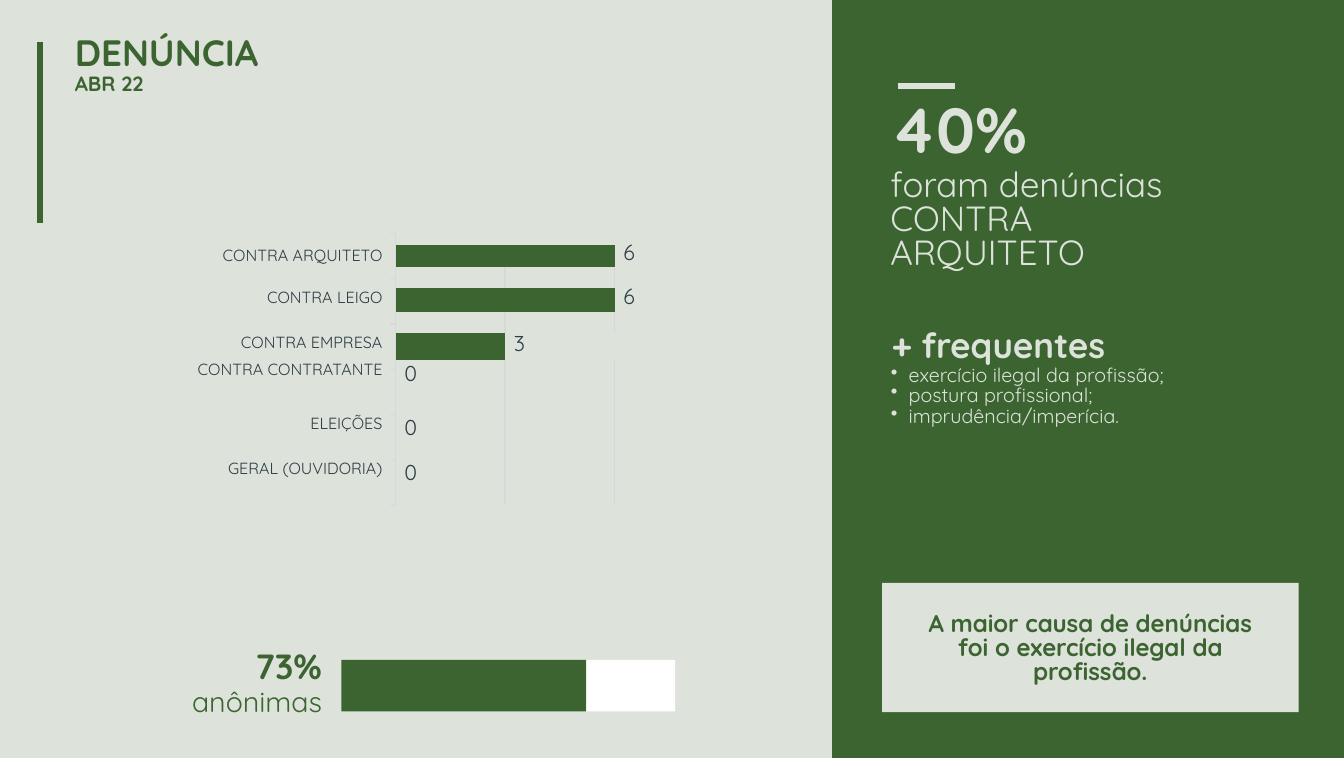
from lxml import etree
from pptx import Presentation
from pptx.dml.color import RGBColor
from pptx.enum.shapes import MSO_CONNECTOR, MSO_SHAPE
from pptx.enum.text import MSO_ANCHOR, MSO_AUTO_SIZE, PP_ALIGN
from pptx.oxml.ns import qn
from pptx.util import Pt

STRAIGHT = MSO_CONNECTOR.STRAIGHT
RECTANGLE = MSO_SHAPE.RECTANGLE
LEFT, CENTER, RIGHT = PP_ALIGN.LEFT, PP_ALIGN.CENTER, PP_ALIGN.RIGHT
TOP = MSO_ANCHOR.TOP
NO_AUTOFIT = MSO_AUTO_SIZE.NONE

FONT = "Quicksand"
COLORS = {
    "green": "3B6431",
    "mist": "DDE2DA",
    "white": "FFFFFF",
    "slate": "2F3D46",
    "grid": "D8D8D8",
}
PLAIN_TABLE_STYLE = "{2D5ABB26-0587-4C30-8999-92F81FD0307C}"

COLUMN_WIDTHS = [113, 61.2, 61.2, 14.4]
ROW_HEIGHTS = [12.2, 11.7, 13.5, 11.6, 15.1, 30.2, 25.2, 25.2]
# row, label, space above label, value, space above value, line height
COMPLAINTS = [
    (0, "CONTRA ARQUITETO", 0.3, 6, 0, 11.6),
    (2, "CONTRA LEIGO", 1.4, 6, 0.2, 12.4),
    (4, "CONTRA EMPRESA", 1.6, 3, 0.2, 13.7),
    (5, "CONTRA CONTRATANTE", 13, 0, 11.8, None),
    (6, "ELEIÇÕES", 6.8, 0, 5.4, None),
    (7, "GERAL (OUVIDORIA)", 6.8, 0, 5.4, None),
]
UNITS_PER_COLUMN = 3
GRID_ROWS = [1, 3, 5, 6, 7]
FREQUENT_CAUSES = [
    ("exercício ilegal da profissão;", 11.5),
    ("postura profissional;", 11.1),
    ("imprudência/imperícia.", 12.2),
]


def rgb(color):
    return RGBColor.from_string(COLORS[color])


def write_para(para, text, size, color, bold=False, align=LEFT,
               line=None, before=0, indent=0):
    para.alignment = align
    para.space_before = Pt(before)
    if line:
        para.line_spacing = line
    if indent:
        para._p.get_or_add_pPr().set("marL", str(Pt(indent)))
    span = para.add_run()
    span.text = text
    span.font.name = FONT
    span.font.size = Pt(size)
    span.font.bold = bold
    span.font.color.rgb = rgb(color)


def add_bullet(para):
    properties = para._p.get_or_add_pPr()
    properties.set("marL", str(Pt(11)))
    properties.set("indent", str(Pt(-10)))
    etree.SubElement(properties, qn("a:buChar")).set("char", "•")


def prepare_frame(frame, left=0, top=0, right=0):
    frame.margin_left, frame.margin_top = Pt(left), Pt(top)
    frame.margin_right, frame.margin_bottom = Pt(right), Pt(0)
    frame.vertical_anchor = TOP
    frame.word_wrap = True
    frame.auto_size = NO_AUTOFIT
    return frame


def add_text(page, left, top, width, height, inset):
    box = page.shapes.add_textbox(Pt(left), Pt(top), Pt(width), Pt(height))
    return prepare_frame(box.text_frame, top=inset)


def add_block(page, left, top, width, height, color):
    block = page.shapes.add_shape(RECTANGLE, Pt(left), Pt(top), Pt(width), Pt(height))
    block.shadow.inherit = False
    block.fill.solid()
    block.fill.fore_color.rgb = rgb(color)
    block.line.fill.background()
    return block


def add_rule(page, x1, y1, x2, y2, color, weight):
    rule = page.shapes.add_connector(STRAIGHT, Pt(x1), Pt(y1), Pt(x2), Pt(y2))
    rule.line.color.rgb = rgb(color)
    rule.line.width = Pt(weight)
    etree.SubElement(rule._element.spPr, qn("a:effectLst"))


def add_border(cell, side):
    border = etree.Element(qn("a:" + side), w=str(Pt(0.75)))
    fill = etree.SubElement(border, qn("a:solidFill"))
    etree.SubElement(fill, qn("a:srgbClr")).set("val", COLORS["grid"])
    cell._tc.get_or_add_tcPr().insert(0, border)


def clear_cell(cell):
    cell.margin_left = cell.margin_top = cell.margin_right = cell.margin_bottom = Pt(0)
    cell.fill.background()
    ending = cell.text_frame.paragraphs[0]._p.get_or_add_endParaRPr()
    ending.set("sz", "600")


def add_complaints(page):
    frame = page.shapes.add_table(
        len(ROW_HEIGHTS), len(COLUMN_WIDTHS), Pt(108), Pt(136.8),
        Pt(sum(COLUMN_WIDTHS)), Pt(sum(ROW_HEIGHTS)))
    table = frame.table
    table.first_row = table.horz_banding = False
    table._tbl.tblPr.find(qn("a:tableStyleId")).text = PLAIN_TABLE_STYLE
    for column, width in zip(table.columns, COLUMN_WIDTHS):
        column.width = Pt(width)
    for row, height in zip(table.rows, ROW_HEIGHTS):
        row.height = Pt(height)
    for cell in table.iter_cells():
        clear_cell(cell)
    for row, label, label_gap, value, value_gap, line in COMPLAINTS:
        label_cell = table.cell(row, 0)
        label_cell.margin_right = Pt(7.4)
        write_para(label_cell.text_frame.paragraphs[0], label, 9, "slate",
                   align=RIGHT, before=label_gap)
        bars = value // UNITS_PER_COLUMN
        for column in range(1, bars + 1):
            bar = table.cell(row, column)
            bar.fill.solid()
            bar.fill.fore_color.rgb = rgb("green")
        para = table.cell(row, bars + 1).text_frame.paragraphs[0]
        write_para(para, str(value), 12, "slate", before=value_gap,
                   line=Pt(line) if line else None,
                   align=CENTER if bars == 2 else LEFT,
                   indent=2 if bars == 2 else 5)
    for row in GRID_ROWS:
        add_border(table.cell(row, 1), "lnR")
        add_border(table.cell(row, 2), "lnL")


def add_axis(page):
    top, step, count = 130.3, 25.35, 6
    add_rule(page, 221, top, 221, top + step * count, "grid", 0.6)
    for index in range(count + 1):
        tick = top + step * index
        add_rule(page, 218.2, tick, 221, tick, "grid", 0.6)


def add_title(page):
    title = page.shapes.title
    title.left, title.top, title.width, title.height = Pt(39.6), Pt(16.6), Pt(189.4), Pt(44)
    frame = prepare_frame(title.text_frame, top=1.4)
    write_para(frame.paragraphs[0], "DENÚNCIA", 20.5, "green", True,
               line=Pt(23.1), before=1.1, indent=2.2)
    write_para(frame.add_paragraph(), "ABR 22", 11.5, "green", True,
               line=Pt(12.3), indent=2.2)


def add_anonymous_share(page):
    add_block(page, 190.8, 368.6, 136.8, 28.8, "green")
    add_block(page, 327.6, 368.6, 49.7, 28.8, "white")
    frame = add_text(page, 100, 360.7, 80, 41.8, 0.7)
    write_para(frame.paragraphs[0], "73%", 19.5, "green", True, RIGHT, Pt(21.9), 0.9)
    write_para(frame.add_paragraph(), "anônimas", 16, "green", False, RIGHT, Pt(17.6))


def add_highlights(page):
    add_rule(page, 501.6, 48.1, 533.5, 48.1, "mist", 3.6)
    frame = add_text(page, 496.8, 51.1, 169, 169.2, 1.4)
    write_para(frame.paragraphs[0], "40%", 35.5, "mist", True,
               line=Pt(40.5), before=1.1, indent=1.5)
    write_para(frame.add_paragraph(), "foram denúncias CONTRA ARQUITETO", 19.5, "mist",
               line=Pt(19.1), before=2.1, indent=0.7)
    write_para(frame.add_paragraph(), "+ frequentes", 19.5, "mist", True,
               line=Pt(22.8), before=29, indent=1.4)
    for cause, line in FREQUENT_CAUSES:
        para = frame.add_paragraph()
        write_para(para, cause, 11, "mist", line=Pt(line))
        add_bullet(para)


def add_conclusion(page):
    box = add_block(page, 492.9, 325.6, 232.8, 72.2, "mist")
    frame = prepare_frame(box.text_frame, 19.4, 17, 19.4)
    write_para(frame.paragraphs[0],
               "A maior causa de denúncias foi o exercício ilegal da profissão.",
               13.5, "green", True, CENTER, 0.83)


def main():
    deck = Presentation()
    deck.slide_width, deck.slide_height = Pt(751), Pt(423.4)
    page = deck.slides.add_slide(deck.slide_layouts[5])
    page.background.fill.solid()
    page.background.fill.fore_color.rgb = rgb("mist")
    add_title(page)
    add_rule(page, 22.5, 23.4, 22.5, 124.6, "green", 3.6)
    add_block(page, 465, 0, 286, 423.4, "green")
    add_complaints(page)
    add_axis(page)
    add_anonymous_share(page)
    add_highlights(page)
    add_conclusion(page)
    deck.save("out.pptx")


if __name__ == "__main__":
    main()
